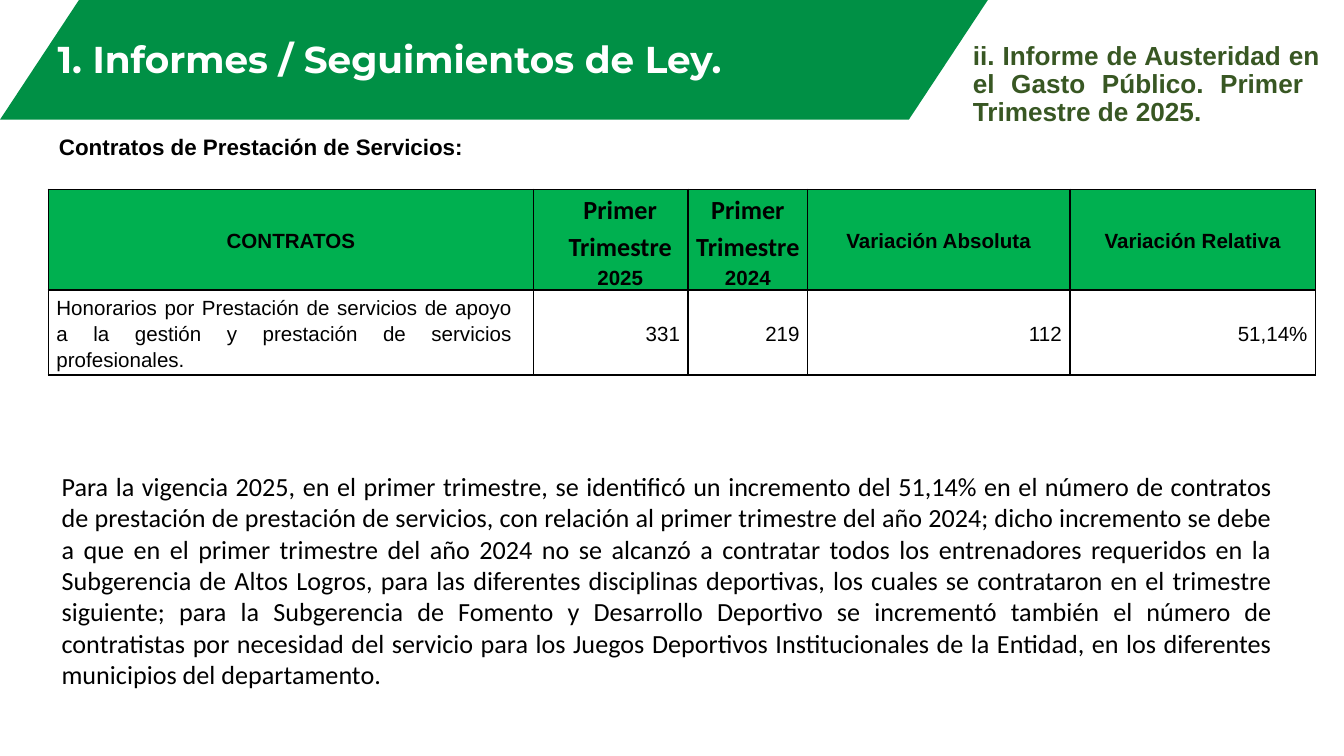
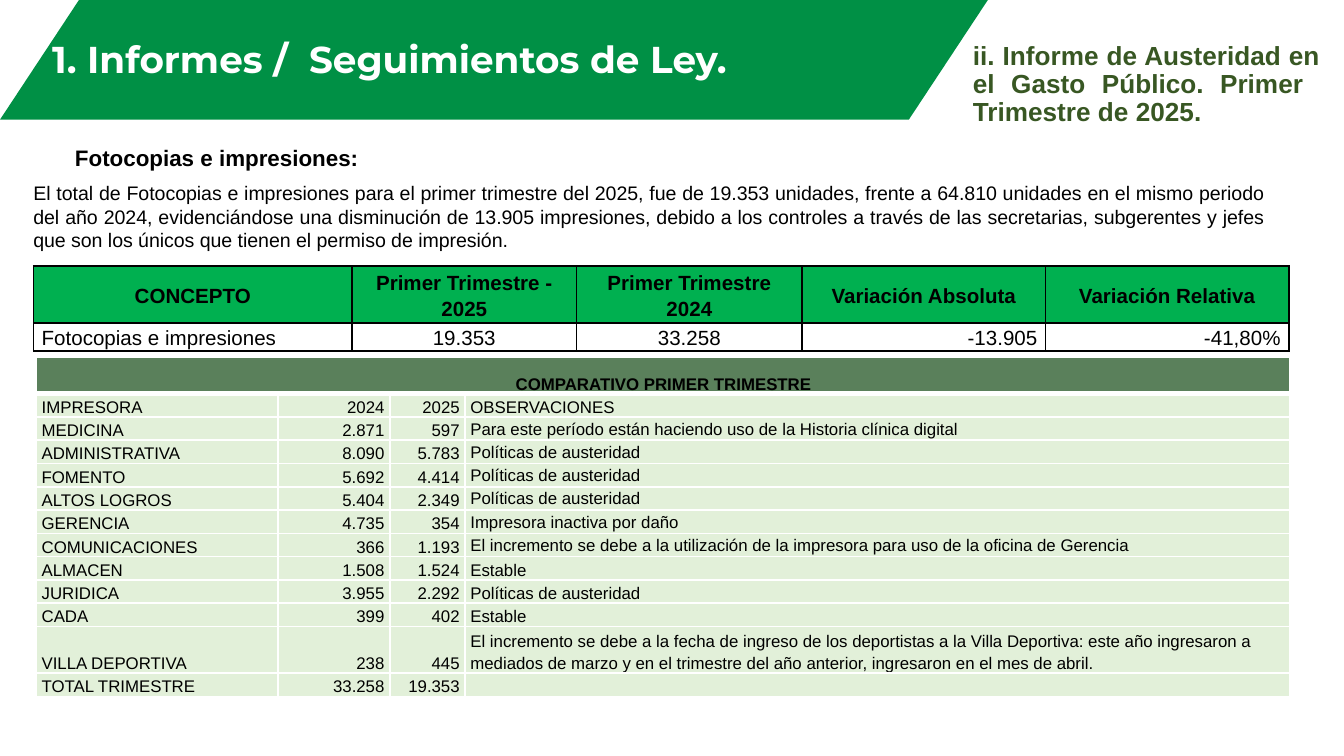
"""Build two slides on the austerity report: service contracts and photocopies."""
from lxml import etree
from pptx import Presentation
from pptx.dml.color import RGBColor
from pptx.enum.shapes import MSO_SHAPE
from pptx.enum.text import MSO_ANCHOR, MSO_AUTO_SIZE, PP_ALIGN
from pptx.oxml.ns import qn
from pptx.util import Inches, Pt

LEFT, CENTER, RIGHT, JUSTIFY = PP_ALIGN.LEFT, PP_ALIGN.CENTER, PP_ALIGN.RIGHT, PP_ALIGN.JUSTIFY
TOP, MIDDLE, BOTTOM = MSO_ANCHOR.TOP, MSO_ANCHOR.MIDDLE, MSO_ANCHOR.BOTTOM
PARALLELOGRAM = MSO_SHAPE.PARALLELOGRAM
NO_AUTOFIT = MSO_AUTO_SIZE.NONE

BAND_GREEN = RGBColor(0x00, 0x90, 0x45)
HEADER_GREEN = RGBColor(0x00, 0xB0, 0x50)
TOPIC_GREEN = RGBColor(0x38, 0x57, 0x23)
PRINTER_HEADER = RGBColor(0x5A, 0x80, 0x5B)
PRINTER_ROW = RGBColor(0xE2, 0xF0, 0xD9)
BLACK = RGBColor(0, 0, 0)
WHITE = RGBColor(0xFF, 0xFF, 0xFF)

TOPIC = "ii. Informe de Austeridad en el Gasto Público. Primer  Trimestre de 2025."
TITLES = ["1. Informes / Seguimientos de Ley.", "1. Informes /  Seguimientos de Ley."]
SECTIONS = [
    ("Contratos de Prestación de Servicios:", (0.34, 0.94, 3.33, 0.3)),
    ("Fotocopias e impresiones:", (0.46, 1.02, 2.6, 0.3)),
]
COMMENTS = [
    ("Para la vigencia 2025, en el primer trimestre, se identificó un incremento del 51,14% en el "
     "número de contratos de prestación de prestación de servicios, con relación al primer trimestre "
     "del año 2024; dicho incremento se debe a que en el primer trimestre del año 2024 no se alcanzó "
     "a contratar todos los entrenadores requeridos en la Subgerencia de Altos Logros, para las "
     "diferentes disciplinas deportivas, los cuales se contrataron en el trimestre siguiente; para la "
     "Subgerencia de Fomento y Desarrollo Deportivo se incrementó también el número de contratistas "
     "por necesidad del servicio para los Juegos Deportivos Institucionales de la Entidad, en los "
     "diferentes municipios del departamento.", (0.36, 3.45, 9.21, 1.75), 14, "Calibri"),
    ("El total de Fotocopias e impresiones para el primer trimestre del 2025, fue de 19.353 unidades, "
     "frente a 64.810 unidades en el mismo periodo del año 2024, evidenciándose una disminución de "
     "13.905 impresiones, debido a los controles a través de las secretarias, subgerentes y jefes que "
     "son los únicos que tienen el permiso de impresión.", (0.15, 1.3, 9.37, 0.63), 10.5, "Arial"),
]
CONTRACTS = [
    ["CONTRATOS", "Primer Trimestre 2025", "Primer Trimestre 2024",
     "Variación Absoluta", "Variación Relativa"],
    ["Honorarios por Prestación de servicios de apoyo a la gestión y prestación de servicios "
     "profesionales.", "331", "219", "112", "51,14%"],
]
COPIES = [
    ["CONCEPTO", "Primer Trimestre - 2025", "Primer Trimestre 2024",
     "Variación Absoluta", "Variación Relativa"],
    ["Fotocopias e impresiones", "19.353", "33.258", "-13.905", "-41,80%"],
]
AUSTERITY = "Políticas de austeridad"
PRINTERS = [
    ["COMPARATIVO PRIMER TRIMESTRE", "", "", ""],
    ["IMPRESORA", "2024", "2025", "OBSERVACIONES"],
    ["MEDICINA", "2.871", "597", "Para este período están haciendo uso de la Historia clínica digital"],
    ["ADMINISTRATIVA", "8.090", "5.783", AUSTERITY],
    ["FOMENTO", "5.692", "4.414", AUSTERITY],
    ["ALTOS LOGROS", "5.404", "2.349", AUSTERITY],
    ["GERENCIA", "4.735", "354", "Impresora inactiva por daño"],
    ["COMUNICACIONES", "366", "1.193",
     "El incremento se debe a la utilización de la impresora para uso de la oficina de Gerencia"],
    ["ALMACEN", "1.508", "1.524", "Estable"],
    ["JURIDICA", "3.955", "2.292", AUSTERITY],
    ["CADA", "399", "402", "Estable"],
    ["VILLA DEPORTIVA", "238", "445",
     "El incremento se debe a la fecha de ingreso de los deportistas a la Villa Deportiva: este año "
     "ingresaron a mediados de marzo y en el trimestre del año anterior, ingresaron en el mes de abril."],
    ["TOTAL TRIMESTRE", "33.258", "19.353", ""],
]


def write(frame, text, size, align, font="Arial", color=BLACK, bold=False, spacing=1.0):
    """Put one formatted paragraph in a text frame."""
    frame.word_wrap = True
    frame.text = text
    para = frame.paragraphs[0]
    para.alignment = align
    para.line_spacing = spacing
    for span in para.runs:
        span.font.name, span.font.size, span.font.bold = font, Pt(size), bold
        span.font.color.rgb = color
    if not text:
        etree.SubElement(para._p, qn("a:endParaRPr"), sz=str(size * 100))


def add_grid(slide, place, widths, heights, data, aligns, size, anchor, inset, border, header, body):
    """Add a bordered table with a bold centred first row."""
    table = slide.shapes.add_table(len(data), len(widths), *map(Inches, place)).table
    table.first_row = table.horz_banding = False
    for column, width in zip(table.columns, widths):
        column.width = Inches(width)
    for row, height in zip(table.rows, heights):
        row.height = Inches(height)
    for r, texts in enumerate(data):
        for c, text in enumerate(texts):
            cell = table.cell(r, c)
            cell.margin_left = cell.margin_right = Inches(inset)
            cell.margin_top = cell.margin_bottom = 0
            cell.vertical_anchor = anchor
            write(cell.text_frame, text, size, aligns[c] if r else CENTER, bold=r == 0, spacing=1.15)
            for side in ("lnL", "lnR", "lnT", "lnB"):
                line = etree.SubElement(cell._tc.get_or_add_tcPr(), qn(f"a:{side}"), w=str(Pt(1)))
                paint = etree.SubElement(line, qn("a:solidFill"))
                etree.SubElement(paint, qn("a:srgbClr"), val=str(border))
            color = body if r else header
            if color is None:
                cell.fill.background()
            else:
                cell.fill.solid()
                cell.fill.fore_color.rgb = color
    return table


deck = Presentation()
deck.slide_width, deck.slide_height = Inches(10), Inches(10 * 9 / 16)
pages = []

for title_text, section, comment in zip(TITLES, SECTIONS, COMMENTS):
    page = deck.slides.add_slide(deck.slide_layouts[5])
    pages.append(page)
    title = page.shapes.title
    band = page.shapes.add_shape(PARALLELOGRAM, 0, 0, Inches(7.35), Inches(0.89))
    band.adjustments[0] = 0.66
    band.shadow.inherit = False
    band.fill.solid()
    band.fill.fore_color.rgb = BAND_GREEN
    band.line.fill.background()
    title.element.addprevious(band.element)

    title.left, title.top, title.width, title.height = map(Inches, (0, 0.23, 5.8, 0.43))
    title.text_frame.auto_size = NO_AUTOFIT
    title.text_frame.vertical_anchor = BOTTOM
    write(title.text_frame, title_text, 20, CENTER, "Montserrat", WHITE, True, 0.9)

    topic = page.shapes.add_textbox(*map(Inches, (7.14, 0.27, 2.78, 0.74)))
    write(topic.text_frame, TOPIC, 14, JUSTIFY, color=TOPIC_GREEN, bold=True, spacing=0.9)
    heading, place = section
    box = page.shapes.add_textbox(*map(Inches, place))
    write(box.text_frame, heading, 12, JUSTIFY, bold=True)
    text, place, size, font = comment
    box = page.shapes.add_textbox(*map(Inches, place))
    write(box.text_frame, text, size, JUSTIFY, font)

contracts_page, copies_page = pages

contracts = add_grid(contracts_page, (0.36, 1.41, 9.43, 1.38), [3.61, 1.15, 0.89, 1.95, 1.83],
                     [0.75, 0.63], CONTRACTS, [JUSTIFY] + [RIGHT] * 4, 11, MIDDLE, 0.06,
                     BLACK, HEADER_GREEN, None)
for c, year in ((1, "2025"), (2, "2024")):
    para = contracts.cell(0, c).text_frame.paragraphs[0]
    quarter = para.runs[0]
    quarter.text = "Primer Trimestre "
    quarter.font.name, quarter.font.size = "Calibri", Pt(14)
    span = para.add_run()
    span.text = year
    span.font.name, span.font.size, span.font.bold = "Arial", Pt(11), True
    span.font.color.rgb = BLACK
for r, c, margin, indent in ((0, 1, "marL", 0.14), (1, 0, "marR", 0.1)):
    para = contracts.cell(r, c).text_frame.paragraphs[0]
    para._p.get_or_add_pPr().set(margin, str(Inches(indent)))

add_grid(copies_page, (0.25, 1.98, 9.34, 0.63), [2.37, 1.67, 1.68, 1.81, 1.81], [0.42, 0.21],
         COPIES, [LEFT, CENTER, CENTER, RIGHT, RIGHT], 11, MIDDLE, 0.06, BLACK, HEADER_GREEN, None)

printers = add_grid(copies_page, (0.27, 2.66, 9.33, 2.51), [1.8, 0.83, 0.56, 6.14],
                    [0.27] + [0.17] * 10 + [0.34, 0.17], PRINTERS, [LEFT, RIGHT, RIGHT, LEFT],
                    9, BOTTOM, 0.04, WHITE, PRINTER_HEADER, PRINTER_ROW)
printers.cell(0, 0).merge(printers.cell(0, 3))
for c in range(4):
    for r, side in ((0, "lnB"), (1, "lnT")):
        printers.cell(r, c)._tc.tcPr.find(qn(f"a:{side}")).set("w", str(Pt(3)))
for r in range(2, 8):
    printers.cell(r, 3).vertical_anchor = TOP

deck.save("out.pptx")
